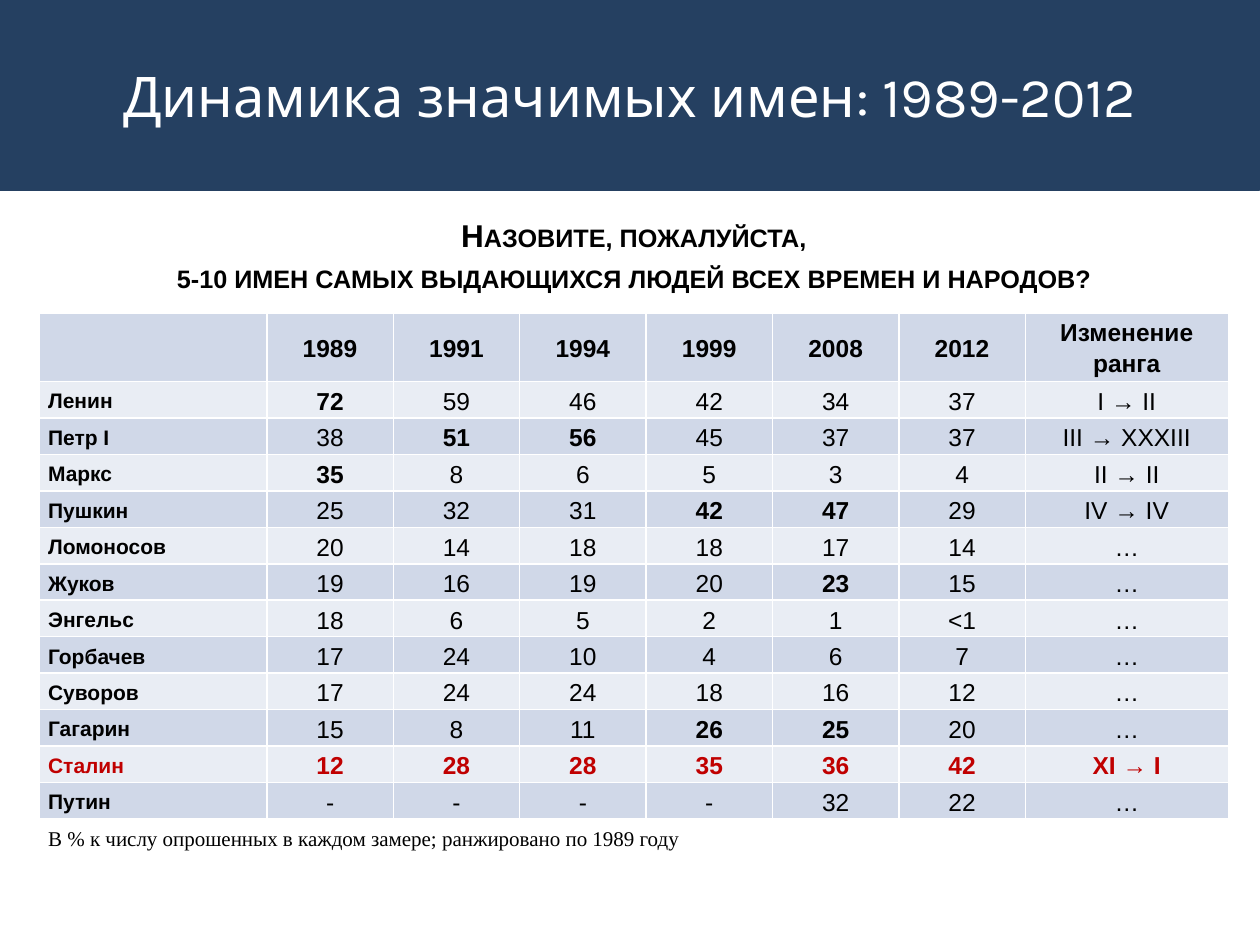
from dataclasses import dataclass

from lxml import etree
from pptx import Presentation
from pptx.dml.color import RGBColor
from pptx.enum import shapes, text
from pptx.oxml import ns
from pptx.util import Pt

NAVY, WHITE, BLACK, RED = "254061", "FFFFFF", "000000", "C00000"
DARK, LIGHT = "D0D8E8", "E9EDF4"
MID, LEFT = text.PP_ALIGN.CENTER, text.PP_ALIGN.LEFT
YEARS = ["1989", "1991", "1994", "1999", "2008", "2012"]


@dataclass
class Face:
    size: float
    font: str = "Arial"
    bold: bool = False
    ink: str = BLACK
    caps: bool = False


@dataclass
class Para:
    align: text.PP_ALIGN = MID
    before: float = 0
    after: float = 0
    lines: float = 1.15


@dataclass
class Name:
    """One person; a star before a value makes it bold."""
    label: str
    marks: str
    rank: str = "…"
    ink: str = BLACK


NAMES = [
    Name("Ленин", "*72 59 46 42 34 37", "I → II"),
    Name("Петр I", "38 *51 *56 45 37 37", "III → XXXIII"),
    Name("Маркс", "*35 8 6 5 3 4", "II → II"),
    Name("Пушкин", "25 32 31 *42 *47 29", "IV → IV"),
    Name("Ломоносов", "20 14 18 18 17 14"),
    Name("Жуков", "19 16 19 20 *23 15"),
    Name("Энгельс", "18 6 5 2 1 <1"),
    Name("Горбачев", "17 24 10 4 6 7"),
    Name("Суворов", "17 24 24 18 16 12"),
    Name("Гагарин", "15 8 11 *26 *25 20"),
    Name("Сталин", "*12 *28 *28 *35 *36 *42", "*XI → I", RED),
    Name("Путин", "- - - - 32 22"),
]


def paint(fmt, ink: str) -> None:
    """Give a fill or line a solid colour."""
    fmt.solid()
    fmt.fore_color.rgb = RGBColor.from_string(ink)


def write(frame, words: str, face: Face, para: Para) -> None:
    p = frame.paragraphs[0]
    p.alignment = para.align
    p.line_spacing = para.lines
    p.space_before, p.space_after = Pt(para.before), Pt(para.after)
    for i, line in enumerate(words.split("\n")):
        if i:
            p.add_line_break()
        run = p.add_run()
        run.text = line
        run.font.size, run.font.name = Pt(face.size), face.font
        run.font.bold = face.bold
        paint(run.font.fill, face.ink)
        if face.caps:
            run.font._element.set("cap", "small")


def edge(cell, base: float = 1) -> None:
    """Draw white borders; base is the width of the lower one."""
    props = cell._tc.get_or_add_tcPr()
    for side, width in zip("LRTB", (1, 1, 1, base)):
        line = etree.SubElement(props, ns.qn(f"a:ln{side}"), w=str(Pt(width)))
        fill = etree.SubElement(line, ns.qn("a:solidFill"))
        etree.SubElement(fill, ns.qn("a:srgbClr"), val=WHITE)


def put(cell, words: str, face: Face, para: Para) -> None:
    cell.vertical_anchor = text.MSO_ANCHOR.MIDDLE
    cell.margin_left = cell.margin_right = Pt(5)
    cell.margin_top = cell.margin_bottom = 0
    if words:
        write(cell.text_frame, words, face, para)
    else:
        p = cell.text_frame.paragraphs[0]._p
        etree.SubElement(p, ns.qn("a:endParaRPr"), sz=str(int(face.size * 100)))


def banner(slide) -> None:
    bar = slide.shapes.add_shape(shapes.MSO_SHAPE.RECTANGLE, 0, 0, Pt(719.5), Pt(108))
    bar.shadow.inherit = False
    paint(bar.fill, NAVY)
    paint(bar.line.fill, NAVY)
    bar.line.width = Pt(2)
    box = slide.shapes.add_textbox(0, Pt(9.5), Pt(720), Pt(90))
    box.text_frame.word_wrap = True
    box.text_frame.vertical_anchor = text.MSO_ANCHOR.MIDDLE
    write(box.text_frame, "Динамика значимых имен: 1989-2012",
          Face(32, "Karla", ink=WHITE), Para(lines=1))


def grid(slide) -> None:
    wide = [130] + [72.25] * 6 + [116]
    high = [65.5, 40] + [20.85] * (len(NAMES) + 1)
    table = slide.shapes.add_table(len(high), len(wide), Pt(22.5), Pt(112.5),
                                   Pt(sum(wide)), Pt(sum(high))).table
    table.first_row = table.horz_banding = False
    for col, size in zip(table.columns, wide):
        col.width = Pt(size)
    for row, size in zip(table.rows, high):
        row.height = Pt(size)

    last = len(high) - 1
    for r in range(len(high)):
        for c in range(len(wide)):
            cell = table.cell(r, c)
            edge(cell, 1 if r else 3)
            if r == 0:
                cell.fill.background()
            else:
                paint(cell.fill, WHITE if r == last else DARK if r % 2 else LIGHT)

    ask, note = table.cell(0, 0), table.cell(last, 0)
    ask.merge(table.cell(0, 7))
    note.merge(table.cell(last, 6))
    put(ask, "Назовите, пожалуйста,\n5-10 имен самых выдающихся людей всех времен и народов?",
        Face(18, bold=True, caps=True), Para())
    for c, head in enumerate(["", *YEARS, "Изменение ранга"]):
        put(table.cell(1, c), head, Face(14, bold=True), Para(after=10))
    for r, name in enumerate(NAMES, 2):
        put(table.cell(r, 0), name.label, Face(12, bold=True, ink=name.ink), Para(LEFT))
        for c, mark in enumerate([*name.marks.split(), name.rank], 1):
            face = Face(14, bold=mark.startswith("*"), ink=name.ink)
            put(table.cell(r, c), mark.lstrip("*"), face, Para(before=1.5, after=1))
    put(note, "В % к числу опрошенных в каждом замере; ранжировано по 1989 году",
        Face(12, "Times New Roman"), Para(LEFT))
    put(table.cell(last, 7), "", Face(12), Para())


def main() -> None:
    deck = Presentation()
    deck.slide_width, deck.slide_height = Pt(720), Pt(540)
    slide = deck.slides.add_slide(deck.slide_layouts[6])
    banner(slide)
    grid(slide)
    deck.save("out.pptx")


if __name__ == "__main__":
    main()
